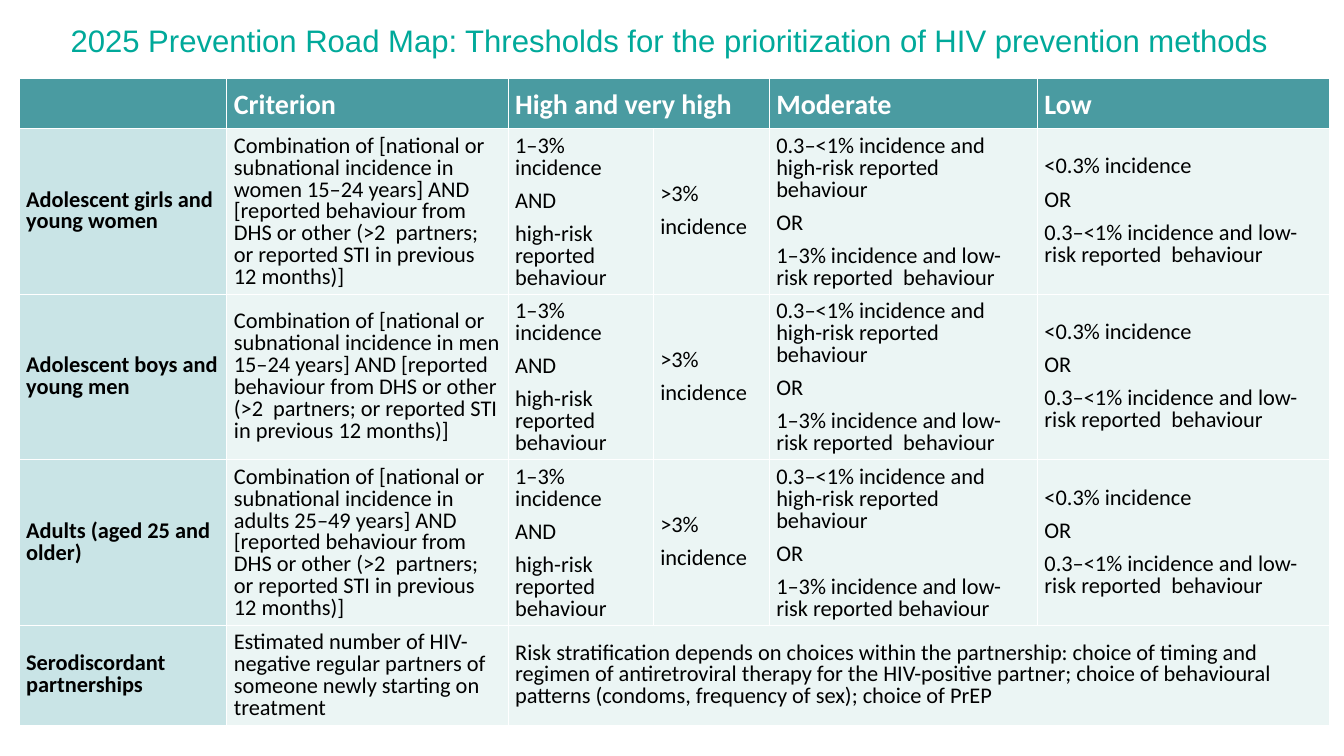
from lxml import etree
from pptx import Presentation
from pptx.dml.color import RGBColor
from pptx.enum.text import MSO_ANCHOR
from pptx.oxml.ns import qn
from pptx.util import Inches, Pt

COLORS = {"title": "00A99A", "header": "4A9BA1", "group": "C9E4E6",
          "body": "EBF5F4", "white": "FFFFFF", "black": "000000"}


def rgb(name):
    return RGBColor.from_string(COLORS[name])


class SlideBuilder:
    title_font = "Arial"
    table_font = "Calibri"
    margin = Inches(0.07)

    def __init__(self, prs):
        self.s = prs.slides.add_slide(prs.slide_layouts[6])

    def style(self, p, font, size, color, bold=False):
        p.font.name, p.font.size, p.font.bold = font, Pt(size), bold
        p.font.color.rgb = rgb(color)

    def title(self, text, left, top, width, height):
        box = self.s.shapes.add_textbox(Inches(left), Inches(top), Inches(width), Inches(height))
        tf = box.text_frame
        tf.word_wrap = True
        tf.margin_left = tf.margin_right = tf.margin_top = tf.margin_bottom = 0
        p = tf.paragraphs[0]
        p.text = text
        self.style(p, self.title_font, 22.2, "title")

    def borders(self, cell):
        tcPr = cell._tc.get_or_add_tcPr()
        for i, side in enumerate(("lnL", "lnR", "lnT", "lnB")):
            ln = etree.Element(qn(f"a:{side}"), w=str(Pt(1)))
            fill = etree.SubElement(ln, qn("a:solidFill"))
            etree.SubElement(fill, qn("a:srgbClr"), val=COLORS["white"])
            tcPr.insert(i, ln)

    def cell(self, cell, paragraphs, fill, size=16, color="black", bold=False, spacing=0.8):
        cell.fill.solid()
        cell.fill.fore_color.rgb = rgb(fill)
        self.borders(cell)
        cell.vertical_anchor = MSO_ANCHOR.MIDDLE
        cell.margin_left = cell.margin_right = self.margin
        cell.margin_top = cell.margin_bottom = self.margin
        tf = cell.text_frame
        for i, text in enumerate(paragraphs):
            p = tf.add_paragraph() if i else tf.paragraphs[0]
            p.text = text
            p.line_spacing, p.space_after = spacing, Pt(8)
            self.style(p, self.table_font, size, color, bold)

    def table(self, rows, merges, left, top, height, col_widths, row_heights):
        frame = self.s.shapes.add_table(len(rows), len(col_widths), Inches(left), Inches(top),
                                        Inches(sum(col_widths)), Inches(height))
        table = frame.table
        table.first_row = table.horz_banding = False
        for column, width in zip(table.columns, col_widths):
            column.width = Inches(width)
        for row, row_height in zip(table.rows, row_heights):
            row.height = Inches(row_height)
        frame.height = Inches(height)
        for r, row in enumerate(rows):
            for c, paragraphs in enumerate(row):
                cell = table.cell(r, c)
                if r == 0:
                    self.cell(cell, paragraphs, "header", 20, "white", True, 1.07)
                elif c == 0:
                    self.cell(cell, paragraphs, "group", bold=True)
                else:
                    self.cell(cell, paragraphs, "body")
        for r, first, last in merges:
            table.cell(r, first).merge(table.cell(r, last))


def incidence_row(group, people, moderate_low):
    criterion = (f"Combination of [national or subnational incidence in {people} years] AND "
                 "[reported behaviour from DHS or other (>2  partners; or reported STI "
                 "in previous 12 months)]")
    return [
        [group],
        [criterion],
        ["1–3% incidence", "AND", "high-risk reported behaviour"],
        [">3%", "incidence"],
        ["0.3–<1% incidence and high-risk reported behaviour", "OR", moderate_low],
        ["<0.3% incidence", "OR", "0.3–<1% incidence and low-risk reported  behaviour"],
    ]


def main():
    prs = Presentation()
    prs.slide_width, prs.slide_height = Inches(13.33), Inches(7.5)
    slide = SlideBuilder(prs)

    # Title
    slide.title("2025 Prevention Road Map: Thresholds for the prioritization of "
                "HIV prevention methods", 0.7, 0.21, 12.28, 0.57)

    # Thresholds by population group
    rows = [
        [[], ["Criterion"], ["High and very high"], [], ["Moderate"], ["Low"]],
        incidence_row("Adolescent girls and young women", "women 15–24",
                      "1–3% incidence and low-risk reported  behaviour"),
        incidence_row("Adolescent boys and young men", "men 15–24",
                      "1–3% incidence and low-risk reported  behaviour"),
        incidence_row("Adults (aged 25 and older)", "adults 25–49",
                      "1–3% incidence and low-risk reported behaviour"),
        [["Serodiscordant partnerships"],
         ["Estimated number of HIV-negative regular partners of someone newly starting "
          "on treatment"],
         ["Risk stratification depends on choices within the partnership: choice of timing "
          "and regimen of antiretroviral therapy for the HIV-positive partner; choice of "
          "behavioural patterns (condoms, frequency of sex); choice of PrEP"],
         [], [], []],
    ]
    slide.table(rows, merges=[(0, 2, 3), (4, 2, 5)], left=0.19, top=0.78, height=6.43,
                col_widths=[2.06, 2.79, 1.44, 1.15, 2.66, 2.9],
                row_heights=[0.33, 1.08, 1.08, 1.08, 0.65])

    prs.save("out.pptx")


if __name__ == "__main__":
    main()
